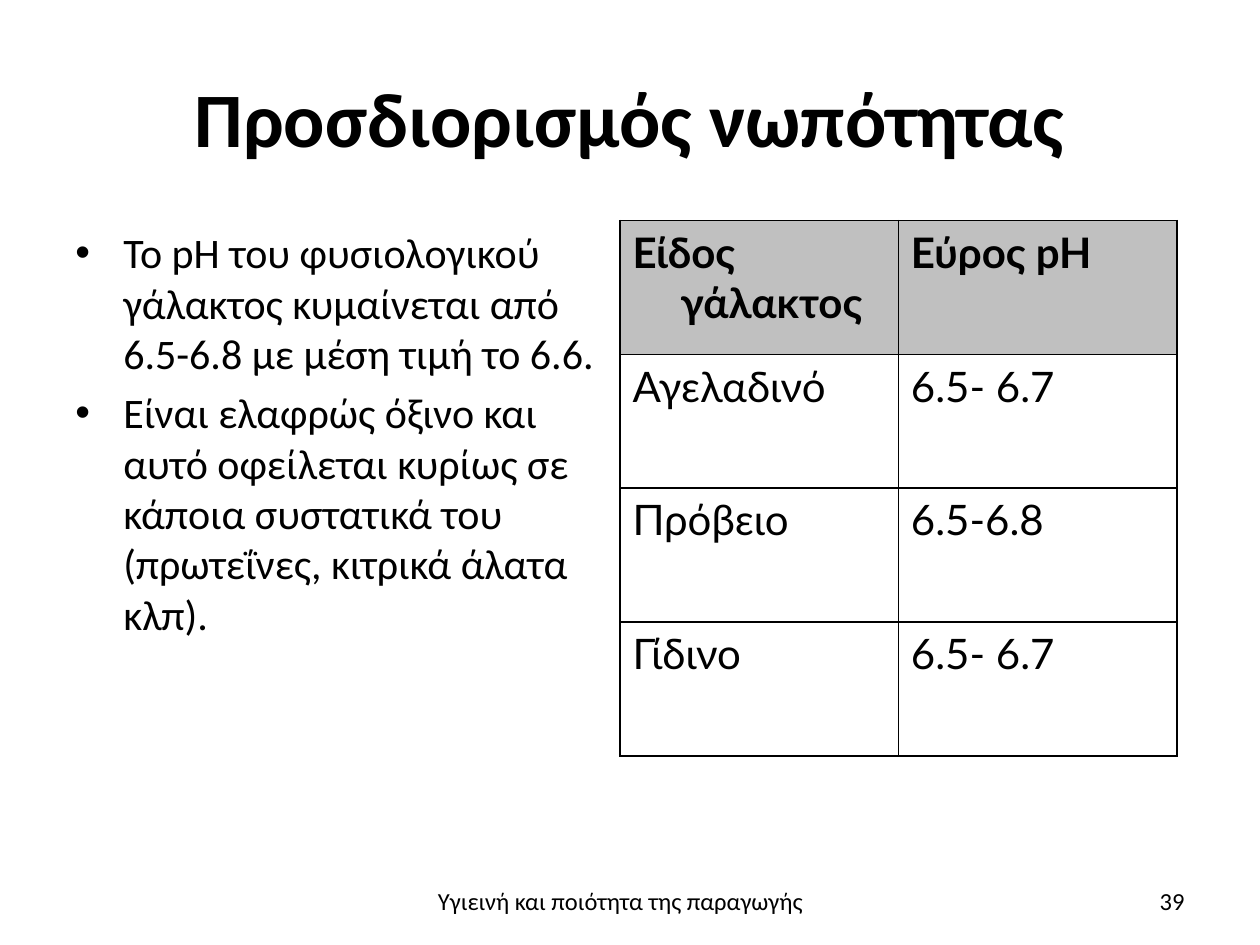
from dataclasses import dataclass

from lxml import etree
from pptx import Presentation
from pptx.dml.color import RGBColor
from pptx.enum import text
from pptx.oxml import ns
from pptx.util import Inches, Pt


@dataclass(frozen=True)
class Theme:
    ink: str = "000000"
    header_fill: str = "C0C0C0"
    font: str = "Calibri"
    table_font: str = "Lato"
    title: int = 44
    body: int = 24
    footer: int = 14
    indent: float = 0.38
    border: float = 1


THEME = Theme()
ALIGN = text.PP_ALIGN
ANCHOR = text.MSO_ANCHOR

TITLE = "Προσδιορισμός νωπότητας"
BULLETS = [
    "Το pH του φυσιολογικού γάλακτος κυμαίνεται από 6.5-6.8 με μέση τιμή το 6.6.",
    "Είναι ελαφρώς όξινο και αυτό οφείλεται κυρίως σε κάποια συστατικά του "
    "(πρωτεΐνες, κιτρικά άλατα κλπ).",
]
MILK_PH = [
    ("Είδος γάλακτος", "Εύρος pH"),
    ("Αγελαδινό", "6.5- 6.7"),
    ("Πρόβειο", "6.5-6.8"),
    ("Γίδινο", "6.5- 6.7"),
]
FOOTER = "Υγιεινή και ποιότητα της παραγωγής"
PAGE_NUMBER = "39"

TITLE_BOX = (0.5, 0.3, 9, 1.25)
BULLET_BOX = (0.5, 1.75, 4.42, 4.95)
TABLE_BOX = (4.92, 1.75, 4.42, 4.25)
FOOTER_BOX = (3.18, 6.98, 3.49, 0.52)
PAGE_BOX = (7.17, 6.95, 2.33, 0.4)


def write_text(frame, lines, size, font=THEME.font, bold=False,
               align=ALIGN.LEFT, hanging=False, bullet=None, gap=0):
    """Fill a text frame with one paragraph per line; gap is in points."""
    frame.word_wrap = True
    for index, line in enumerate(lines):
        paragraph = frame.paragraphs[0] if index == 0 else frame.add_paragraph()
        properties = paragraph._p.get_or_add_pPr()
        if hanging:
            properties.set("marL", str(Inches(THEME.indent)))
            properties.set("indent", str(-Inches(THEME.indent)))
        if bullet:
            etree.SubElement(properties, ns.qn("a:buFont"), typeface="Arial")
            etree.SubElement(properties, ns.qn("a:buChar"), char=bullet)
        paragraph.alignment = align
        paragraph.space_before = Pt(gap if index else 0)
        run = paragraph.add_run()
        run.text = line
        run.font.name = font
        run.font.size = Pt(size)
        run.font.bold = bold
        run.font.color.rgb = RGBColor.from_string(THEME.ink)


def add_text(slide, box, lines, anchor=ANCHOR.TOP, **style):
    frame = slide.shapes.add_textbox(*map(Inches, box)).text_frame
    frame.vertical_anchor = anchor
    write_text(frame, lines, **style)


def set_borders(cell):
    properties = cell._tc.get_or_add_tcPr()
    for position, side in enumerate(("lnL", "lnR", "lnT", "lnB")):
        line = etree.Element(ns.qn(f"a:{side}"), w=str(Pt(THEME.border)))
        fill = etree.SubElement(line, ns.qn("a:solidFill"))
        etree.SubElement(fill, ns.qn("a:srgbClr"), val=THEME.ink)
        properties.insert(position, line)


def add_milk_table(slide):
    row_count, column_count = len(MILK_PH), len(MILK_PH[0])
    table = slide.shapes.add_table(
        row_count, column_count, *map(Inches, TABLE_BOX)).table
    table.horz_banding = False
    for row, values in enumerate(MILK_PH):
        header = row == 0
        for column, value in enumerate(values):
            cell = table.cell(row, column)
            if header:
                cell.fill.solid()
                cell.fill.fore_color.rgb = RGBColor.from_string(THEME.header_fill)
            else:
                cell.fill.background()
            set_borders(cell)
            write_text(cell.text_frame, [value], THEME.body, THEME.table_font,
                       bold=header, align=ALIGN.JUSTIFY, hanging=True)


def main():
    presentation = Presentation()
    presentation.slide_width, presentation.slide_height = Inches(10), Inches(7.5)
    slide = presentation.slides.add_slide(presentation.slide_layouts[6])
    add_text(slide, TITLE_BOX, [TITLE], anchor=ANCHOR.MIDDLE, size=THEME.title,
             bold=True, align=ALIGN.CENTER)
    add_text(slide, BULLET_BOX, BULLETS, size=THEME.body, hanging=True,
             bullet="•", gap=5)
    add_milk_table(slide)
    add_text(slide, FOOTER_BOX, [FOOTER], size=THEME.footer, align=ALIGN.CENTER)
    add_text(slide, PAGE_BOX, [PAGE_NUMBER], anchor=ANCHOR.MIDDLE,
             size=THEME.footer, align=ALIGN.RIGHT)
    presentation.save("out.pptx")


if __name__ == "__main__":
    main()
